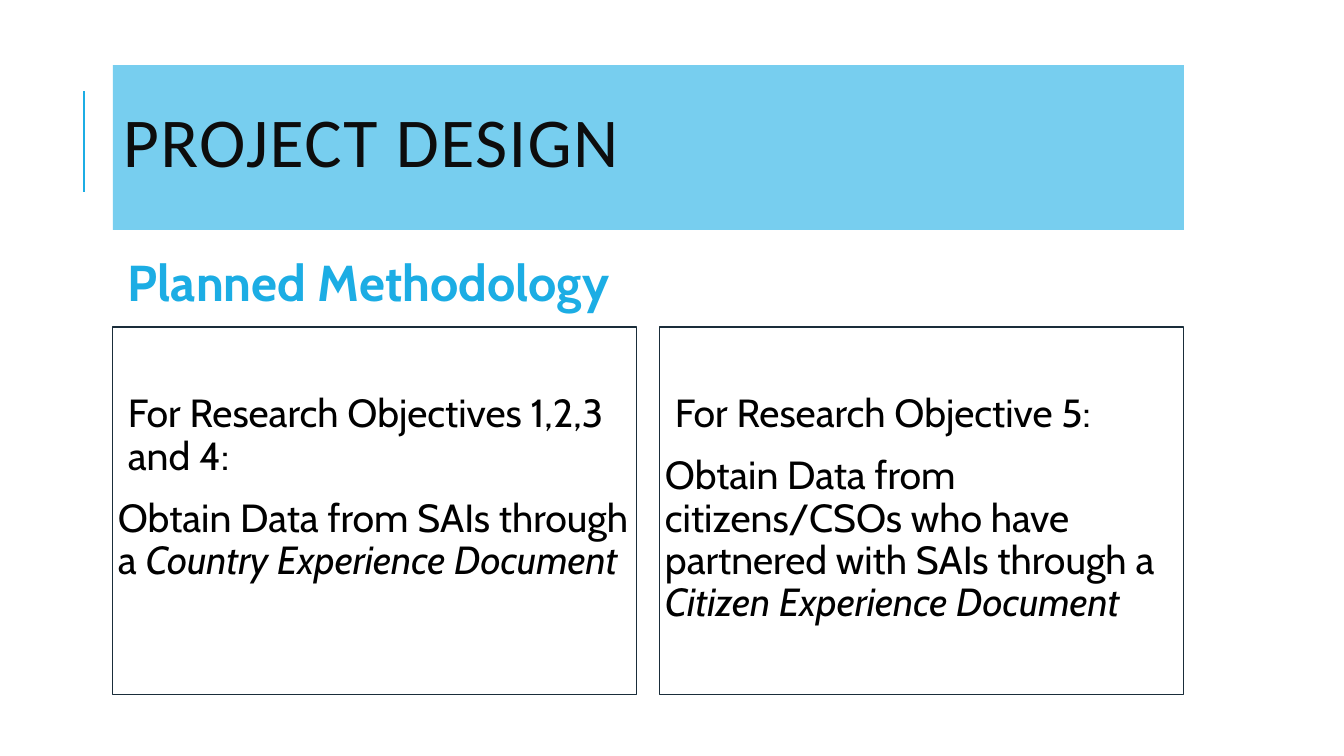
from lxml import etree
from pptx import Presentation
from pptx import util as u
from pptx.dml.color import RGBColor
from pptx.enum import shapes, text
from pptx.oxml.ns import qn

SKY = RGBColor(0x77, 0xCE, 0xEF)
BLUE = RGBColor(0x1C, 0xAD, 0xE4)
NAVY = RGBColor(0x1A, 0x2D, 0x3A)
INK = RGBColor(0x0D, 0x0D, 0x0D)
BLACK = RGBColor(0, 0, 0)

TITLE = "PROJECT DESIGN"
SUBTITLE = "Planned Methodology"
METHODS = [
    ("For Research Objectives 1,2,3 and 4:",
     "Obtain Data from SAIs through a ", "Country Experience Document"),
    ("For Research Objective 5:",
     "Obtain Data from citizens/CSOs who have partnered with SAIs through a ",
     "Citizen Experience Document"),
]

LEFT, PANEL_W, GAP = 113, 524, 23
BAND_W = 2 * PANEL_W + GAP
PANEL_TOP, PANEL_H = 327, 368
HEADING_INDENT = 10


def px(n):
    return u.Emu(round(n * 914400 / 100.8))


def place(shape, x, y, w, h):
    shape.left, shape.top, shape.width, shape.height = map(px, (x, y, w, h))


def set_frame(frame, anchor, side, top, bottom):
    frame.word_wrap = True
    frame.auto_size = text.MSO_AUTO_SIZE.NONE
    frame.vertical_anchor = anchor
    frame.margin_left = frame.margin_right = px(side)
    frame.margin_top, frame.margin_bottom = px(top), px(bottom)


def add_run(paragraph, words, size, font, color, bold=False, italic=False):
    run = paragraph.add_run()
    run.text = words
    run.font.size, run.font.name = u.Pt(size), font
    run.font.bold, run.font.italic = bold, italic
    run.font.color.rgb = color
    return run


def set_spacing(paragraph, line, before=0, after=0):
    paragraph.alignment = text.PP_ALIGN.LEFT
    paragraph.line_spacing = line
    paragraph.space_before, paragraph.space_after = u.Pt(before), u.Pt(after)


def add_accent(slide):
    accent = slide.shapes.add_connector(
        shapes.MSO_CONNECTOR.STRAIGHT, px(84), px(192), px(84), px(91))
    accent.line.color.rgb, accent.line.width = BLUE, u.Pt(1.5)
    etree.SubElement(accent._element.spPr, qn("a:effectLst"))


def fill_title(slide):
    title = slide.shapes.title
    place(title, LEFT, 65, BAND_W, 165)
    title.fill.solid()
    title.fill.fore_color.rgb = SKY
    set_frame(title.text_frame, text.MSO_ANCHOR.MIDDLE, 10, 5, 5)
    line = title.text_frame.paragraphs[0]
    set_spacing(line, 0.8)
    run = add_run(line, TITLE, 50, "Calibri", INK)
    run.font._element.set("spc", "100")


def add_subtitle(slide):
    subtitle = slide.shapes.add_textbox(px(LEFT), px(240), px(PANEL_W), px(91))
    set_frame(subtitle.text_frame, text.MSO_ANCHOR.MIDDLE, 15, 5, 5)
    line = subtitle.text_frame.paragraphs[0]
    set_spacing(line, 0.9)
    add_run(line, SUBTITLE, 36, "Cabin", BLUE, bold=True)


def add_panel(slide, x, heading, lead, document):
    panel = slide.shapes.add_shape(
        shapes.MSO_SHAPE.RECTANGLE, px(x), px(PANEL_TOP), px(PANEL_W), px(PANEL_H))
    panel.shadow.inherit = False
    panel.fill.background()
    panel.line.color.rgb, panel.line.width = NAVY, u.Pt(0.75)
    frame = panel.text_frame
    set_frame(frame, text.MSO_ANCHOR.TOP, 5, 67, 5)
    objective, method = frame.paragraphs[0], frame.add_paragraph()
    for paragraph in (objective, method):
        set_spacing(paragraph, 0.9, 12, 2)
    objective._p.get_or_add_pPr().set("marL", str(px(HEADING_INDENT)))
    add_run(objective, heading, 28, "Cabin", BLACK)
    add_run(method, lead, 28, "Cabin", BLACK)
    add_run(method, document, 28, "Cabin", BLACK, italic=True)


def main():
    """Build the project design slide."""
    deck = Presentation()
    deck.slide_width, deck.slide_height = px(1344), px(756)
    slide = deck.slides.add_slide(deck.slide_layouts[5])
    add_accent(slide)
    fill_title(slide)
    add_subtitle(slide)
    for i, method in enumerate(METHODS):
        add_panel(slide, LEFT + i * (PANEL_W + GAP), *method)
    deck.save("out.pptx")


if __name__ == "__main__":
    main()
